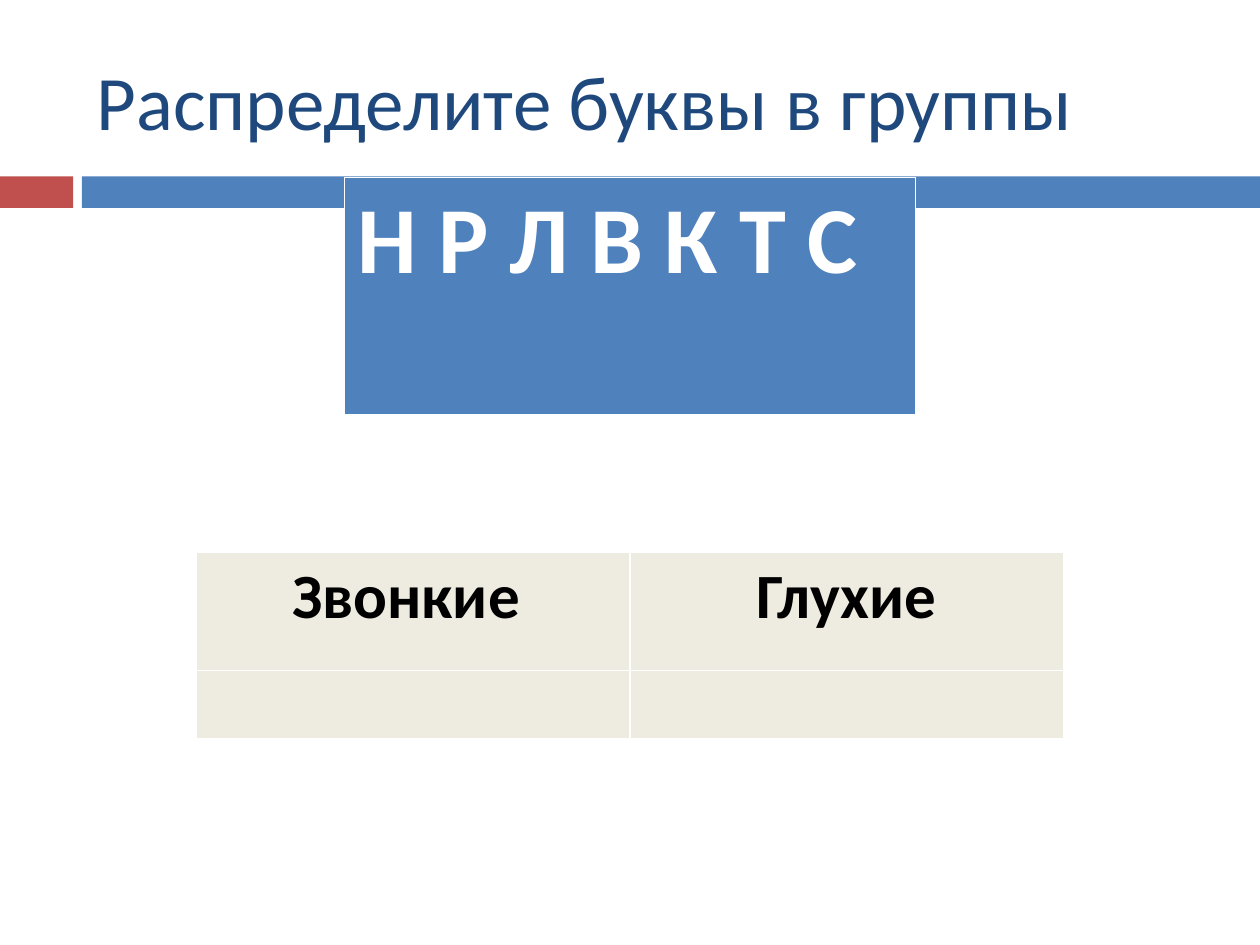
from pptx import Presentation
from pptx.dml.color import RGBColor
from pptx.enum.shapes import MSO_SHAPE
from pptx.enum.text import MSO_ANCHOR, PP_ALIGN
from pptx.util import Inches, Pt

RED = RGBColor(0xC0, 0x50, 0x4D)
BLUE = RGBColor(0x4F, 0x81, 0xBD)
NAVY = RGBColor(0x1F, 0x49, 0x7D)
CREAM = RGBColor(0xEE, 0xEC, 0xE1)
WHITE = RGBColor(0xFF, 0xFF, 0xFF)
BLACK = RGBColor(0x00, 0x00, 0x00)

FONT = "Calibri"
SLIDE_WIDTH, SLIDE_HEIGHT = 10, 7.5
TITLE = "Распределите буквы в группы"
BANDS = [(0, 0.58, RED), (0.65, 9.35, BLUE)]
LETTERS = [["Н Р Л В К Т С"]]
GROUPS = [["Звонкие ", "Глухие"], ["", ""]]


def style_text(paragraph, text, size, color, bold, align):
    paragraph.text = text
    paragraph.alignment = align
    font = paragraph.font
    font.name, font.size, font.bold = FONT, Pt(size), bold
    font.color.rgb = color


def add_grid(slide, rows, top, width, heights, fill, size, color, align):
    columns = len(rows[0])
    left = (SLIDE_WIDTH - width) / 2
    grid = slide.shapes.add_table(
        len(rows), columns, Inches(left), Inches(top), Inches(width), Inches(sum(heights))
    ).table
    for column in grid.columns:
        column.width = Inches(width / columns)
    for r, (texts, height) in enumerate(zip(rows, heights)):
        grid.rows[r].height = Inches(height)
        for c, text in enumerate(texts):
            cell = grid.cell(r, c)
            cell.fill.solid()
            cell.fill.fore_color.rgb = fill
            if text:
                style_text(cell.text_frame.paragraphs[0], text, size, color, True, align)


def main():
    prs = Presentation()
    prs.slide_width, prs.slide_height = Inches(SLIDE_WIDTH), Inches(SLIDE_HEIGHT)
    slide = prs.slides.add_slide(prs.slide_layouts[6])

    for left, width, color in BANDS:
        band = slide.shapes.add_shape(
            MSO_SHAPE.RECTANGLE, Inches(left), Inches(1.4), Inches(width), Inches(0.25)
        )
        band.shadow.inherit = False
        band.fill.solid()
        band.fill.fore_color.rgb = color
        band.line.fill.background()

    title = slide.shapes.add_textbox(
        Inches(0.67), Inches(0.25), Inches(8.92), Inches(1.08)
    ).text_frame
    title.word_wrap = True
    title.vertical_anchor = MSO_ANCHOR.MIDDLE
    style_text(title.paragraphs[0], TITLE, 44, NAVY, False, PP_ALIGN.LEFT)

    add_grid(slide, LETTERS, 1.41, 4.53, [1.88], BLUE, 54, WHITE, PP_ALIGN.LEFT)
    add_grid(slide, GROUPS, 4.38, 6.88, [0.94, 0.54], CREAM, 36, BLACK, PP_ALIGN.CENTER)

    prs.save("out.pptx")


if __name__ == "__main__":
    main()
